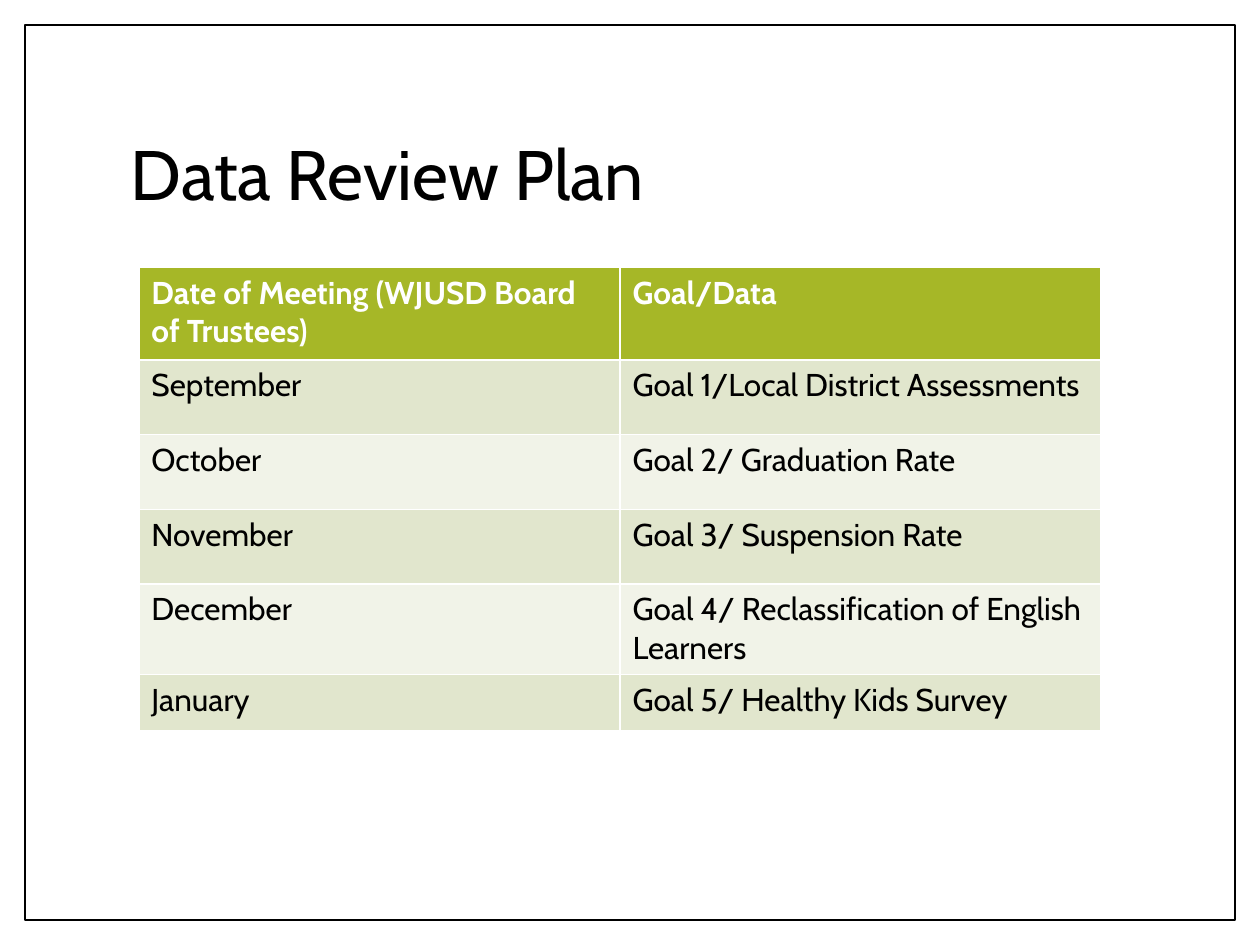
from pptx import Presentation
from pptx.dml.color import RGBColor
from pptx.enum import shapes, text
from pptx.util import Cm, Pt

TITLE = "Data Review Plan"
HEADER = ("Date of Meeting (WJUSD Board of Trustees)", "Goal/Data")
MEETINGS = [
    ("September", "Goal 1/Local District Assessments"),
    ("October", "Goal 2/ Graduation Rate"),
    ("November", "Goal 3/ Suspension Rate"),
    ("December", "Goal 4/ Reclassification of English Learners"),
    ("January", "Goal 5/ Healthy Kids Survey"),
]
ROW_HEIGHTS = [1.87, 1.5, 1.51, 1.5, 1.83, 1.14]
COLUMN_WIDTH = 9.7

THEME = {
    "font": "Cabin",
    "title_size": 40,
    "table_size": 18,
    "ink": RGBColor(0x00, 0x00, 0x00),
    "paper": RGBColor(0xFF, 0xFF, 0xFF),
    "header": RGBColor(0xA6, 0xB7, 0x27),
    "bands": (RGBColor(0xE1, 0xE6, 0xCD), RGBColor(0xF1, 0xF3, 0xE8)),
}


def write_text(frame, content, size, color=THEME["ink"], bold=False, spacing=1.0):
    frame.word_wrap = True
    paragraph = frame.paragraphs[0]
    paragraph.line_spacing = spacing
    run = paragraph.add_run()
    run.text = content
    run.font.name = THEME["font"]
    run.font.size = Pt(size)
    run.font.bold = bold
    run.font.color.rgb = color


def add_frame(slide):
    frame = slide.shapes.add_shape(
        shapes.MSO_SHAPE.RECTANGLE, Cm(0.5), Cm(0.5), Cm(24.4), Cm(18.05)
    )
    frame.shadow.inherit = False
    frame.fill.solid()
    frame.fill.fore_color.rgb = THEME["paper"]
    frame.line.color.rgb = THEME["ink"]
    frame.line.width = Pt(1)


def add_title(slide):
    title = slide.shapes.add_textbox(Cm(2.39), Cm(1.7), Cm(20.57), Cm(3.76))
    title.text_frame.vertical_anchor = text.MSO_ANCHOR.MIDDLE
    write_text(title.text_frame, TITLE, THEME["title_size"], spacing=0.9)


def add_meeting_table(slide):
    rows = [HEADER, *MEETINGS]
    table = slide.shapes.add_table(
        len(rows), len(HEADER), Cm(2.8), Cm(5.39),
        Cm(COLUMN_WIDTH * len(HEADER)), Cm(sum(ROW_HEIGHTS)),
    ).table
    for column in table.columns:
        column.width = Cm(COLUMN_WIDTH)
    for index, (row, height) in enumerate(zip(rows, ROW_HEIGHTS)):
        table.rows[index].height = Cm(height)
        is_header = index == 0
        fill = THEME["header"] if is_header else THEME["bands"][(index - 1) % 2]
        color = THEME["paper"] if is_header else THEME["ink"]
        for cell, content in zip(table.rows[index].cells, row):
            cell.fill.solid()
            cell.fill.fore_color.rgb = fill
            write_text(cell.text_frame, content, THEME["table_size"],
                       color=color, bold=is_header)


def main():
    presentation = Presentation()
    presentation.slide_width = Cm(25.4)
    presentation.slide_height = Cm(19.05)
    slide = presentation.slides.add_slide(presentation.slide_layouts[6])
    add_frame(slide)
    add_title(slide)
    add_meeting_table(slide)
    presentation.save("out.pptx")


if __name__ == "__main__":
    main()
